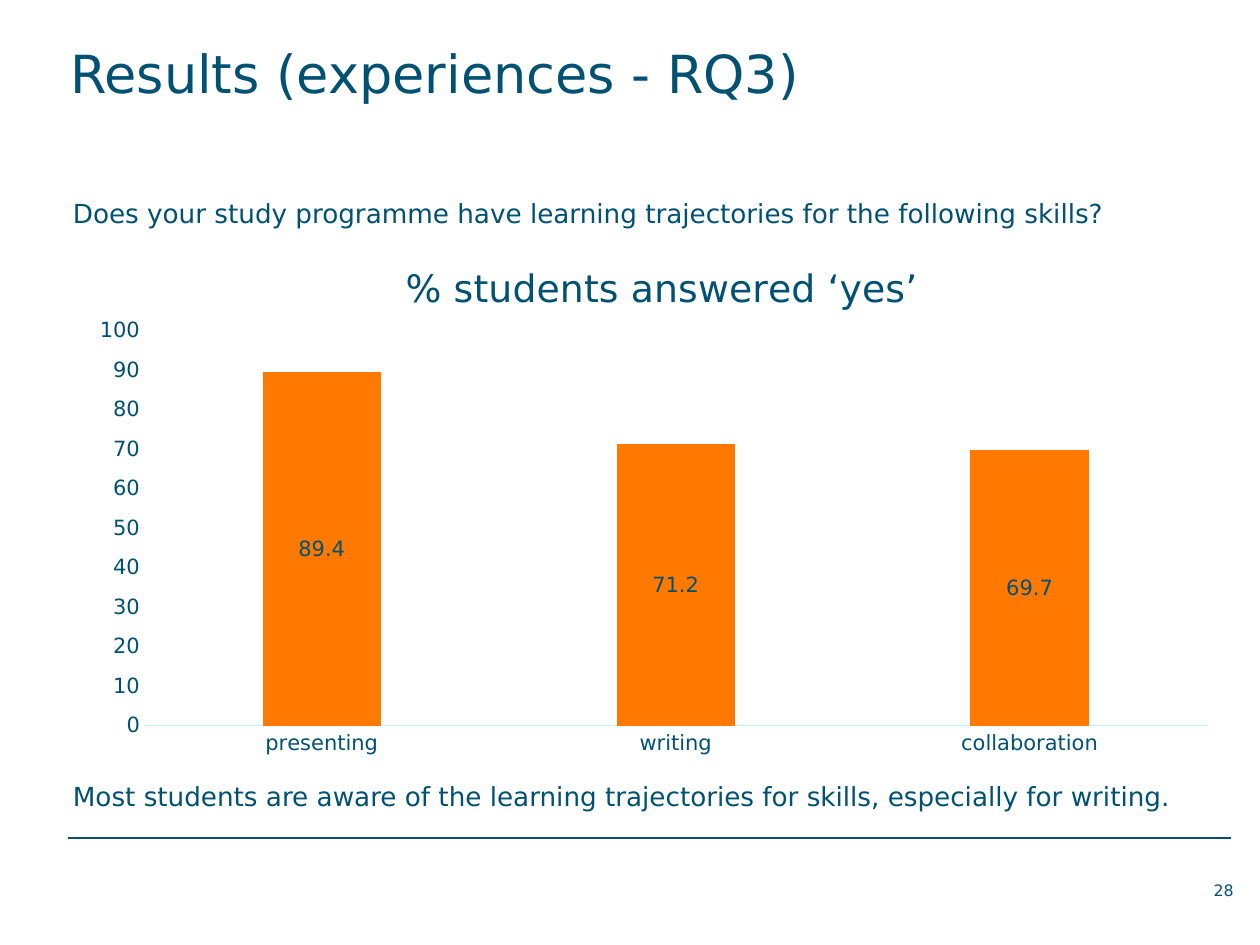
from lxml import etree
from pptx import Presentation
from pptx.chart.data import CategoryChartData
from pptx.dml.color import RGBColor
from pptx.enum.chart import XL_CHART_TYPE, XL_LABEL_POSITION, XL_TICK_MARK
from pptx.enum.shapes import MSO_CONNECTOR
from pptx.enum.text import PP_ALIGN
from pptx.oxml import parse_xml
from pptx.oxml.ns import nsdecls, qn
from pptx.util import Inches, Pt

COLUMN = XL_CHART_TYPE.COLUMN_CLUSTERED
CENTER = XL_LABEL_POSITION.CENTER
NO_TICK = XL_TICK_MARK.NONE
STRAIGHT = MSO_CONNECTOR.STRAIGHT
LEFT, RIGHT = PP_ALIGN.LEFT, PP_ALIGN.RIGHT
FONT = "DejaVu Sans"
COLORS = {
    "text": RGBColor.from_string("005172"),
    "bar": RGBColor.from_string("FF7900"),
    "axis": RGBColor.from_string("C4EEFF"),
}


def style(font, size):
    font.name = FONT
    font.size = Pt(size)
    font.bold = False
    font.color.rgb = COLORS["text"]


def layout(**parts):
    tags = "".join(f'<c:{tag} val="{val}"/>' for tag, val in parts.items())
    return parse_xml(
        f'<c:layout {nsdecls("c")}><c:manualLayout>{tags}</c:manualLayout></c:layout>'
    )


prs = Presentation()
prs.slide_width, prs.slide_height = Inches(10), Inches(7.5)
slide = prs.slides.add_slide(prs.slide_layouts[6])
shapes = slide.shapes

texts = [
    ("Results (experiences - RQ3)", (0.54, 0.27, 9.23, 0.87), (0.02, 0, 0.1, 0), 30, 40, LEFT),
    ("Does your study programme have learning trajectories for the following skills?",
     (0.48, 1.42, 9.29, 0.45), (0.1, 0.05, 0.1, 0.05), 15, 25, LEFT),
    ("Most students are aware of the learning trajectories for skills, especially for writing.",
     (0.48, 6.05, 9.29, 0.45), (0.1, 0.05, 0.1, 0.05), 15, 25, LEFT),
    ("28", (9.32, 6.97, 0.51, 0.18), (0.1, 0, 0.04, 0), 9, 12, RIGHT),
]
for text, area, inset, size, line, align in texts:
    frame = shapes.add_textbox(*map(Inches, area)).text_frame
    frame.word_wrap = True
    frame.margin_left, frame.margin_top, frame.margin_right, frame.margin_bottom = map(Inches, inset)
    frame.text = text
    para = frame.paragraphs[0]
    para.alignment = align
    para.line_spacing = Pt(line)
    style(para.runs[0].font, size)

data = CategoryChartData()
data.categories = ["presenting", "writing", "collaboration"]
data.add_series("Series 1", [89.4, 71.2, 69.7])
area = map(Inches, (0.6, 1.86, 9.16, 4.24))
chart = shapes.add_chart(COLUMN, *area, data).chart
style(chart.font, 10)
chart.has_legend = False

title = chart.chart_title
title.text_frame.text = "% students answered ‘yes’"
style(title.text_frame.paragraphs[0].runs[0].font, 21.6)
node = chart.element.chart.find(qn("c:title"))
for old in node.findall(qn("c:layout")):
    node.remove(old)
node.find(qn("c:tx")).addnext(layout(xMode="edge", yMode="edge", x=0.28, y=0.04))

area = chart.element.chart.plotArea
for old in area.findall(qn("c:layout")):
    area.remove(old)
area.insert(0, layout(layoutTarget="inner", xMode="edge", yMode="edge",
                      x=0.06, y=0.18, w=0.92, h=0.74))

for axis in (chart.category_axis, chart.value_axis):
    axis.major_tick_mark = axis.minor_tick_mark = NO_TICK
    axis.has_major_gridlines = False
    style(axis.tick_labels.font, 12)
rule = chart.category_axis.format.line
rule.color.rgb = COLORS["axis"]
rule.width = Pt(0.75)
scale = chart.value_axis
scale.minimum_scale, scale.maximum_scale, scale.major_unit = 0, 100, 10
scale.format.line.fill.background()

plot = chart.plots[0]
plot.gap_width = 199
plot.vary_by_categories = False
fill = plot.series[0].format.fill
fill.solid()
fill.fore_color.rgb = COLORS["bar"]
plot.has_data_labels = True
labels = plot.data_labels
labels.show_value = True
labels.position = CENTER
style(labels.font, 12)

foot = shapes.add_connector(STRAIGHT, *map(Inches, (0.54, 6.65, 9.77, 6.65)))
foot.line.color.rgb = COLORS["text"]
foot.line.width = Pt(1.25)
etree.SubElement(foot.element.spPr, qn("a:effectLst"))

prs.save("out.pptx")
